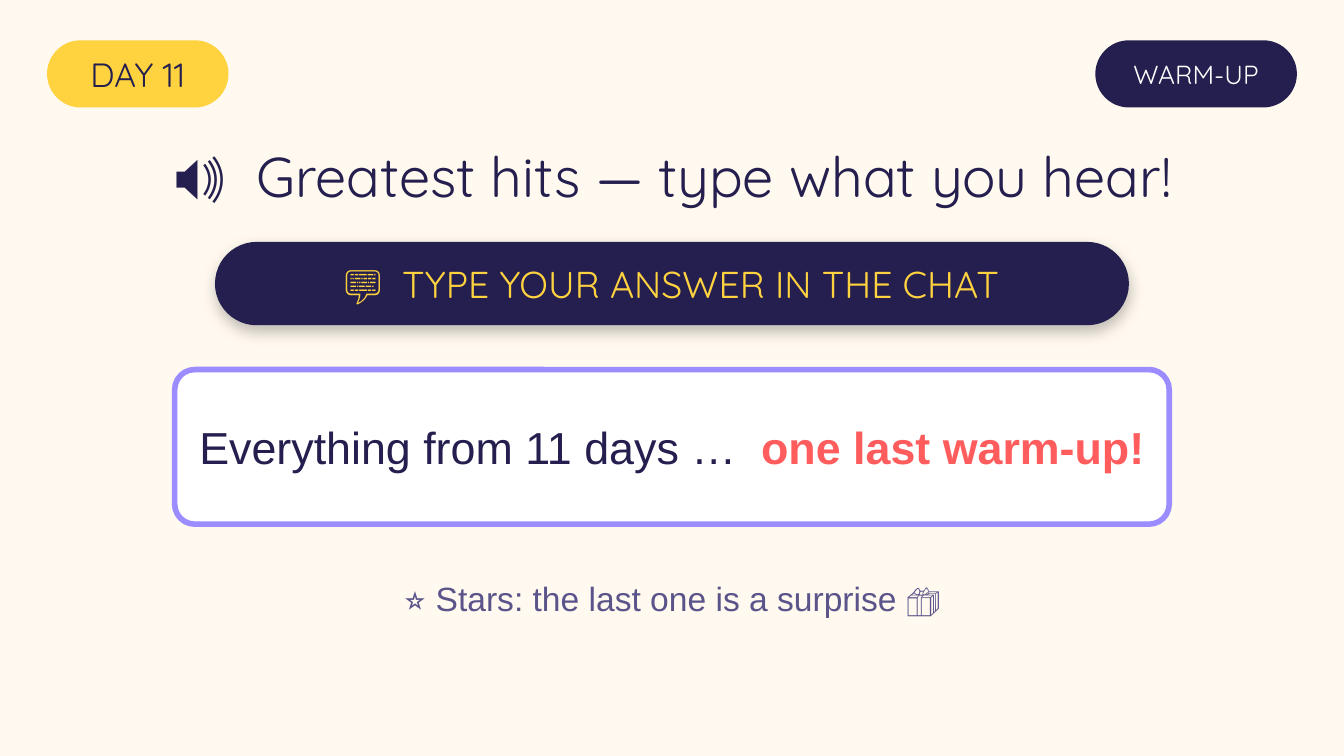
from lxml.etree import SubElement
from pptx import Presentation
from pptx.dml.color import RGBColor
from pptx.enum.shapes import MSO_SHAPE
from pptx.enum.text import MSO_ANCHOR, MSO_AUTO_SIZE, PP_ALIGN
from pptx.oxml.ns import qn
from pptx.util import Inches, Pt

NAVY, YELLOW, WHITE, CREAM = "241F4E", "FFD23F", "FFFFFF", "FFF9EF"
LILAC, CORAL, MUTED = "9B8CFF", "FF5D5D", "5A548A"


def colour(value):
    """Turn a hex string into a colour."""
    return RGBColor.from_string(value)


def write_text(shape, spans, size, font_name):
    """Write one centred line from (text, colour, bold) spans."""
    frame = shape.text_frame
    frame.word_wrap = True
    frame.auto_size = MSO_AUTO_SIZE.NONE
    frame.vertical_anchor = MSO_ANCHOR.MIDDLE
    frame.margin_left = frame.margin_right = 0
    frame.margin_top = frame.margin_bottom = 0
    para = frame.paragraphs[0]
    para.alignment = PP_ALIGN.CENTER
    for text, text_colour, bold in spans:
        span = para.add_run()
        span.text = text
        span.font.name = font_name
        span.font.size = Pt(size)
        span.font.bold = bold
        span.font.color.rgb = colour(text_colour)


def add_rounded(page, left, top, width, height, fill, rounding=0.5):
    """Add a flat rounded rectangle without an outline."""
    box = page.shapes.add_shape(
        MSO_SHAPE.ROUNDED_RECTANGLE,
        Inches(left), Inches(top), Inches(width), Inches(height))
    box.adjustments[0] = rounding
    box.shadow.inherit = False
    box.fill.solid()
    box.fill.fore_color.rgb = colour(fill)
    box.line.fill.background()
    return box


def add_pill(page, left, top, width, height, fill, text, text_colour, size):
    """Add a labelled pill."""
    pill = add_rounded(page, left, top, width, height, fill)
    write_text(pill, [(text, text_colour, False)], size, "Quicksand")
    return pill


def add_soft_shadow(shape):
    """Give a shape a soft shadow falling straight down."""
    effects = shape.element.spPr.find(qn("a:effectLst"))
    shadow = SubElement(effects, qn("a:outerShdw"), blurRad=str(Pt(8)),
                        dist=str(Pt(3)), dir="5400000", algn="ctr",
                        rotWithShape="0")
    shade = SubElement(shadow, qn("a:srgbClr"), val="000000")
    SubElement(shade, qn("a:alpha"), val="25000")


def set_title(page, text):
    """Place and format the slide title."""
    title = page.shapes.title
    title.left, title.top = Inches(0), Inches(0.95)
    title.width, title.height = Inches(10), Inches(0.7)
    write_text(title, [(text, NAVY, False)], 30, "Quicksand")


def add_card(page, spans):
    """Add the outlined card with the main message."""
    card = add_rounded(page, 1.3, 2.75, 7.4, 1.15, WHITE, 0.13)
    card.line.color.rgb = colour(LILAC)
    card.line.width = Pt(3)
    write_text(card, spans, 24, "Arial")


def add_footnote(page, text):
    """Add the closing line below the card."""
    box = page.shapes.add_textbox(
        Inches(0), Inches(4.2), Inches(10), Inches(0.5))
    write_text(box, [(text, MUTED, False)], 18, "Arial")


def main():
    """Build and save the warm-up slide."""
    deck = Presentation()
    deck.slide_width = Inches(10)
    deck.slide_height = Inches(10 * 9 / 16)
    page = deck.slides.add_slide(deck.slide_layouts.get_by_name("Title Only"))
    page.background.fill.solid()
    page.background.fill.fore_color.rgb = colour(CREAM)

    add_pill(page, 0.35, 0.3, 1.35, 0.5, YELLOW, "DAY 11", NAVY, 18)
    add_pill(page, 8.15, 0.3, 1.5, 0.5, NAVY, "WARM-UP", WHITE, 14)
    set_title(page, "🔊  Greatest hits — type what you hear!")
    prompt = add_pill(page, 1.6, 1.8, 6.8, 0.62, NAVY,
                      "💬  TYPE YOUR ANSWER IN THE CHAT", YELLOW, 20)
    add_soft_shadow(prompt)
    add_card(page, [("Everything from 11 days …", NAVY, False),
                    ("  one last warm-up!", CORAL, True)])
    add_footnote(page, "⭐ Stars: the last one is a surprise 🎁")
    deck.save("out.pptx")


if __name__ == "__main__":
    main()
